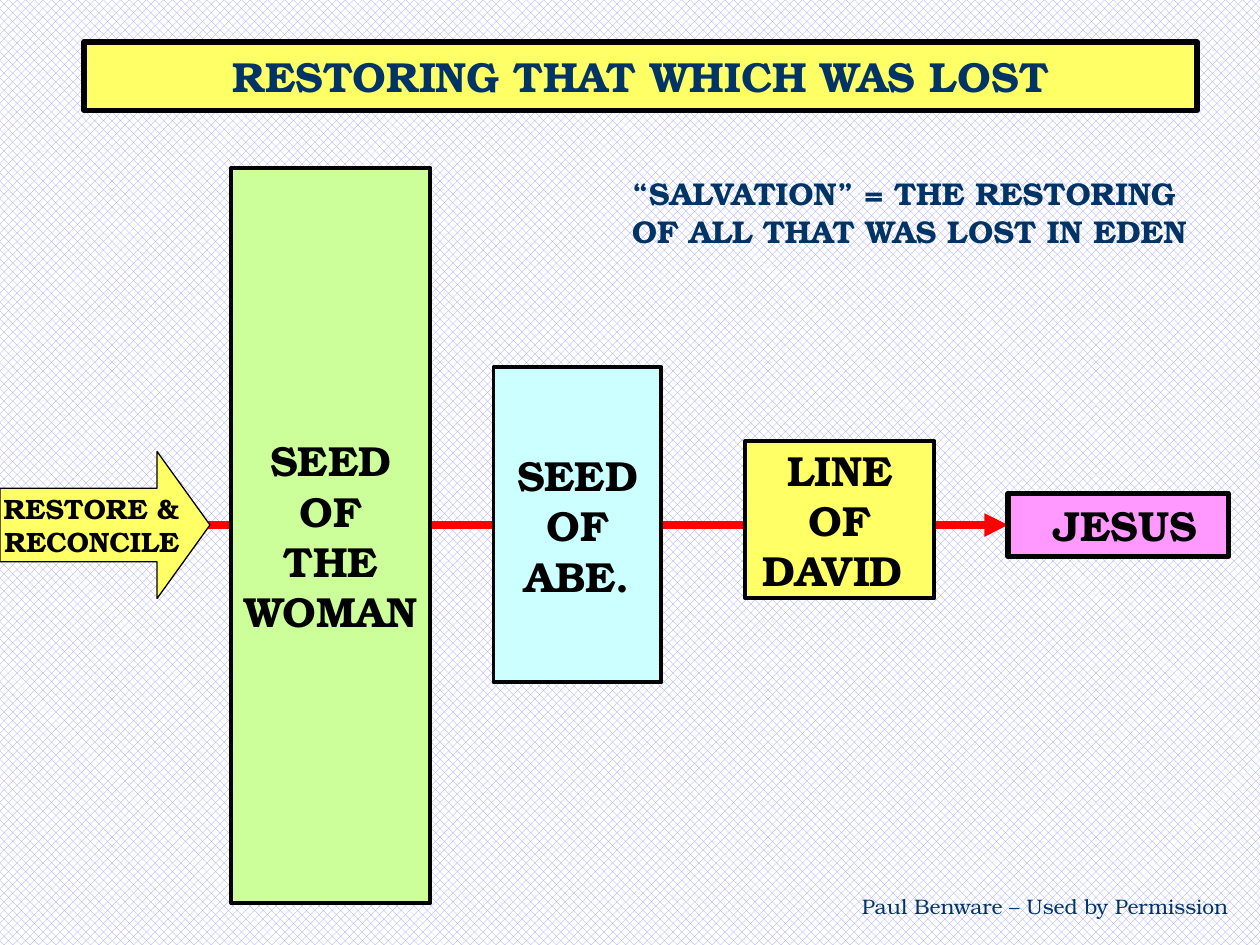
"""Build the slide on the restoring of what was lost in Eden."""
from pptx import Presentation
from pptx.dml.color import RGBColor
from pptx.enum.dml import MSO_PATTERN
from pptx.enum.shapes import MSO_CONNECTOR, MSO_SHAPE
from pptx.enum.text import MSO_ANCHOR, MSO_AUTO_SIZE, PP_ALIGN
from pptx.oxml.ns import qn
from pptx.util import Inches, Pt
from lxml.etree import SubElement

COLORS = {"yellow": "FFFF66", "green": "CCFF99", "aqua": "CCFFFF", "pink": "FF99FF",
          "black": "000000", "navy": "003366", "red": "FF0000", "white": "FFFFFF",
          "lilac": "9999FF"}
FONT = "TeX Gyre Bonum"
COLUMNS, ROWS = 120, 90
WIDTH, HEIGHT = Inches(10), Inches(7.5)
MIDDLE_ROW = 50
STAGES = [
    (22, 16, 19, 70, "green", 2.25, ["SEED", "OF", "THE", "WOMAN"]),
    (47, 35, 16, 30, "aqua", 2.25, ["SEED", "OF", "ABE."]),
    (71, 42, 18, 15, "yellow", 2.25, ["LINE", "OF", "DAVID "]),
    (96, 47, 21, 6, "pink", 3, [" JESUS"]),
]


def color(name):
    return RGBColor.from_string(COLORS[name])


def grid(column, row):
    return round(WIDTH * column / COLUMNS), round(HEIGHT * row / ROWS)


def area(column, row, columns, rows):
    return grid(column, row) + grid(columns, rows)


def paint(shape, fill, weight):
    shape.fill.solid()
    shape.fill.fore_color.rgb = color(fill)
    shape.line.color.rgb = color("black")
    shape.line.width = Pt(weight)


def write(shape, lines, size, ink, bold=True, align=PP_ALIGN.CENTER,
          anchor=MSO_ANCHOR.MIDDLE, wrap=False):
    frame = shape.text_frame
    frame.auto_size = MSO_AUTO_SIZE.NONE
    frame.word_wrap = wrap
    frame.vertical_anchor = anchor
    frame.margin_left = frame.margin_right = Inches(0.1)
    frame.margin_top = frame.margin_bottom = Inches(0.05)
    for index, line in enumerate(lines):
        paragraph = frame.add_paragraph() if index else frame.paragraphs[0]
        paragraph.alignment = align
        paragraph.line_spacing = 1.0
        paragraph.space_before = Pt(0)
        run = paragraph.add_run()
        run.text = line
        run.font.name = FONT
        run.font.size = Pt(size)
        run.font.bold = bold
        run.font.color.rgb = color(ink)


def add_title(slide, text):
    title = slide.shapes.title
    title.left, title.top, title.width, title.height = area(8, 4, 106, 6.5)
    paint(title, "yellow", 3)
    write(title, [text], 24, "navy", wrap=True)


def add_block(slide, preset, place, fill, weight, lines, size):
    block = slide.shapes.add_shape(preset, *area(*place))
    block.shadow.inherit = False
    paint(block, fill, weight)
    write(block, lines, size, "black")
    return block


def add_note(slide, place, text, size, bold):
    note = slide.shapes.add_textbox(*area(*place))
    write(note, [text], size, "navy", bold, PP_ALIGN.LEFT, MSO_ANCHOR.TOP, True)


def add_lineage(slide):
    lineage = slide.shapes.add_connector(
        MSO_CONNECTOR.STRAIGHT, *grid(18, MIDDLE_ROW), *grid(96, MIDDLE_ROW))
    lineage.line.color.rgb = color("red")
    lineage.line.width = Pt(4.5)
    SubElement(lineage.line._get_or_add_ln(), qn("a:tailEnd"), type="triangle")
    SubElement(lineage._element.spPr, qn("a:effectLst"))
    return lineage


def main():
    deck = Presentation()
    deck.slide_width, deck.slide_height = WIDTH, HEIGHT
    slide = deck.slides.add_slide(deck.slide_layouts[5])
    backdrop = slide.background.fill
    backdrop.patterned()
    backdrop.pattern = MSO_PATTERN.PERCENT_50
    backdrop.fore_color.rgb = color("lilac")
    backdrop.back_color.rgb = color("white")

    lineage = add_lineage(slide)
    restore = add_block(slide, MSO_SHAPE.RIGHT_ARROW, (0, 43, 20, 14), "yellow", 0.75,
                        ["RESTORE &", "RECONCILE"], 16)
    restore.adjustments[0], restore.adjustments[1] = 0.5, 0.36
    add_title(slide, "RESTORING THAT WHICH WAS LOST")
    for *place, fill, weight, lines in STAGES:
        stage = add_block(slide, MSO_SHAPE.RECTANGLE, place, fill, weight, lines, 24)
    lineage.end_connect(stage, 1)
    add_note(slide, (59, 16, 57, 8.4),
             "“SALVATION” = THE RESTORING OF ALL THAT WAS LOST IN EDEN", 18, True)
    add_note(slide, (80.9, 84.5, 38, 3.6), "Paul Benware – Used by Permission", 12, False)
    deck.save("out.pptx")


if __name__ == "__main__":
    main()
